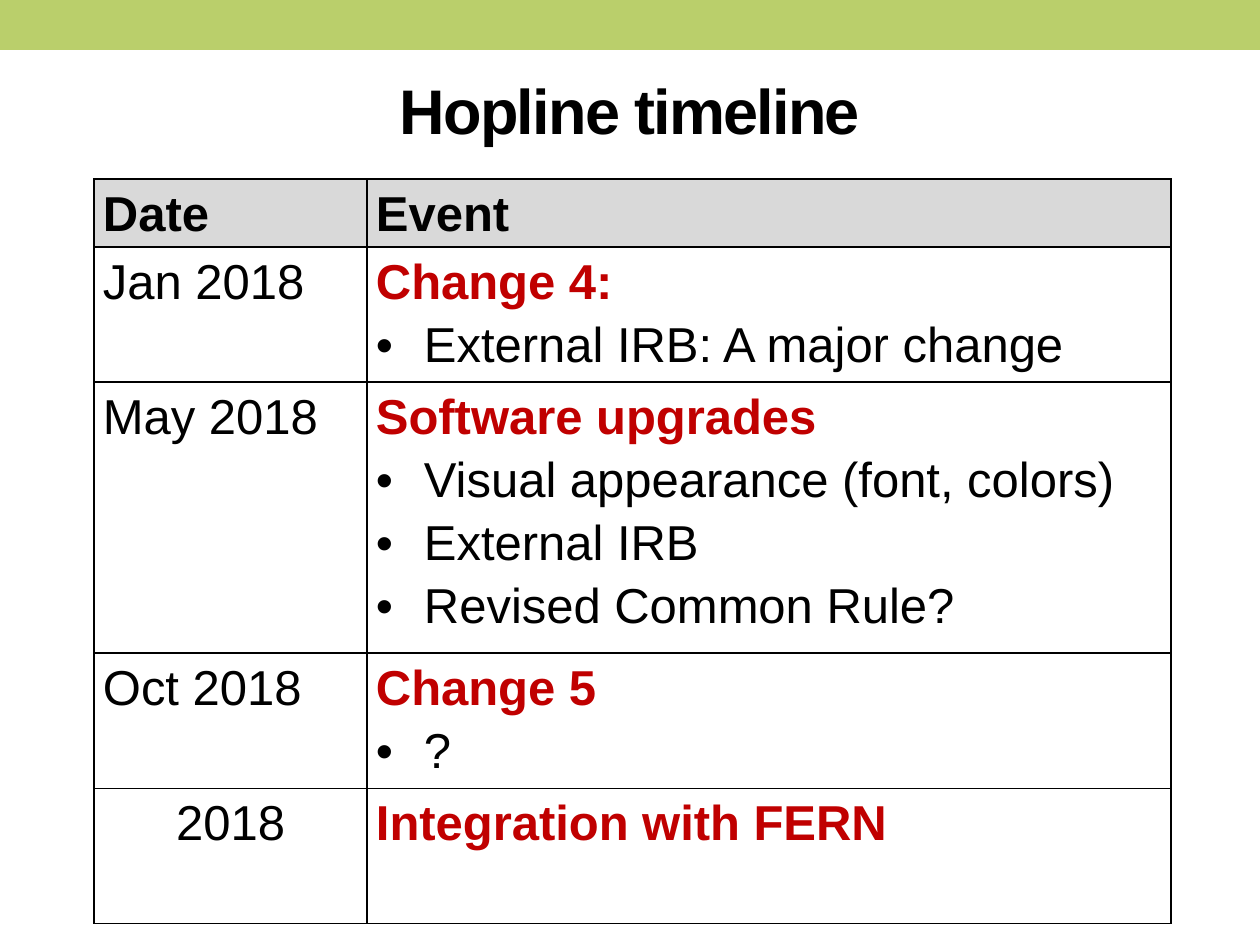
"""Build the project timeline slide: a top band, a title and a table of dated events."""
from dataclasses import dataclass

from lxml.etree import SubElement
from pptx import Presentation
from pptx.dml.color import RGBColor
from pptx.enum.shapes import MSO_SHAPE as Shape
from pptx.enum.text import MSO_ANCHOR as Anchor, PP_ALIGN as Align
from pptx.oxml.ns import qn
from pptx.util import Emu, Pt

SCALE = 914400 / 126
BLACK, RED, GREY, GREEN = "000000", "C00000", "D9D9D9", "BACF6B"
COLUMN_WIDTHS = (273, 804)
BULLET_INDENT = 48
CELL_FORMAT = {"margin_left": 9, "margin_right": 9, "margin_top": 0, "margin_bottom": 0}


@dataclass(frozen=True)
class Line:
    text: str
    bold: bool = False
    color: str = BLACK
    bullet: bool = False
    align: Align = Align.LEFT


@dataclass(frozen=True)
class Row:
    height: int
    date: Line
    event: tuple[Line, ...]
    fill: str | None = None


def heading(text: str) -> Line:
    return Line(text, bold=True, color=RED)


def bullet(text: str) -> Line:
    return Line(text, bullet=True)


ROWS = (
    Row(68, Line("Date", bold=True), (Line("Event", bold=True),), GREY),
    Row(135, Line("Jan 2018"),
        (heading("Change 4:"), bullet("External IRB: A major change"))),
    Row(271, Line("May 2018"),
        (heading("Software upgrades"), bullet("Visual appearance (font, colors)"),
         bullet("External IRB"), bullet("Revised Common Rule?"))),
    Row(135, Line("Oct 2018"), (heading("Change 5"), bullet("?"))),
    Row(135, Line("2018", align=Align.CENTER), (heading("Integration with FERN"),)),
)


def px(length: int) -> Emu:
    return Emu(round(length * SCALE))


def rgb(value: str) -> RGBColor:
    return RGBColor.from_string(value)


def apply_format(target, values: dict) -> None:
    for name, value in values.items():
        setattr(target, name, value)


def write_line(paragraph, line: Line, size: int):
    run = paragraph.add_run()
    run.text = line.text
    apply_format(run.font, {"name": "Arial", "size": Pt(size), "bold": line.bold})
    run.font.color.rgb = rgb(line.color)
    paragraph.alignment = line.align
    return run


def add_bullet(paragraph) -> None:
    properties = paragraph._p.get_or_add_pPr()
    properties.set("marL", str(px(BULLET_INDENT)))
    properties.set("indent", str(-px(BULLET_INDENT)))
    SubElement(properties, qn("a:buFont")).set("typeface", "Arial")
    SubElement(properties, qn("a:buChar")).set("char", "•")


def add_borders(cell) -> None:
    properties = cell._tc.get_or_add_tcPr()
    for side in ("lnL", "lnR", "lnT", "lnB"):
        border = SubElement(properties, qn(f"a:{side}"), w=str(Pt(1)))
        fill = SubElement(border, qn("a:solidFill"))
        SubElement(fill, qn("a:srgbClr")).set("val", BLACK)


def fill_cell(cell, lines: tuple[Line, ...], fill: str | None) -> None:
    apply_format(cell, {name: px(value) for name, value in CELL_FORMAT.items()})
    add_borders(cell)
    if fill:
        cell.fill.solid()
        cell.fill.fore_color.rgb = rgb(fill)
    else:
        cell.fill.background()
    frame = cell.text_frame
    for index, line in enumerate(lines):
        paragraph = frame.add_paragraph() if index else frame.paragraphs[0]
        write_line(paragraph, line, 28)
        paragraph.line_spacing = 1.15
        if line.bullet:
            add_bullet(paragraph)


def add_band(slide) -> None:
    band = slide.shapes.add_shape(Shape.RECTANGLE, 0, 0, px(1260), px(50))
    band.shadow.inherit = False
    band.fill.solid()
    band.fill.fore_color.rgb = rgb(GREEN)
    band.line.fill.background()


def add_title(slide, text: str) -> None:
    frame = slide.shapes.add_textbox(px(63), px(73), px(1134), px(73)).text_frame
    apply_format(frame, {"word_wrap": True, "vertical_anchor": Anchor.MIDDLE})
    title = Line(text, bold=True, align=Align.CENTER)
    run = write_line(frame.paragraphs[0], title, 36)
    run.font._element.set("spc", "-100")


def add_timeline(slide, rows: tuple[Row, ...]) -> None:
    width, height = sum(COLUMN_WIDTHS), sum(row.height for row in rows)
    table = slide.shapes.add_table(
        len(rows), len(COLUMN_WIDTHS), px(94), px(179), px(width), px(height)).table
    apply_format(table, {"first_row": False, "horz_banding": False})
    for column, column_width in zip(table.columns, COLUMN_WIDTHS):
        column.width = px(column_width)
    for index, row in enumerate(rows):
        table.rows[index].height = px(row.height)
        fill_cell(table.cell(index, 0), (row.date,), row.fill)
        fill_cell(table.cell(index, 1), row.event, row.fill)


def main() -> None:
    presentation = Presentation()
    apply_format(presentation, {"slide_width": px(1260), "slide_height": px(945)})
    slide = presentation.slides.add_slide(presentation.slide_layouts[6])
    add_band(slide)
    add_title(slide, "Hopline timeline")
    add_timeline(slide, ROWS)
    presentation.save("out.pptx")


if __name__ == "__main__":
    main()
